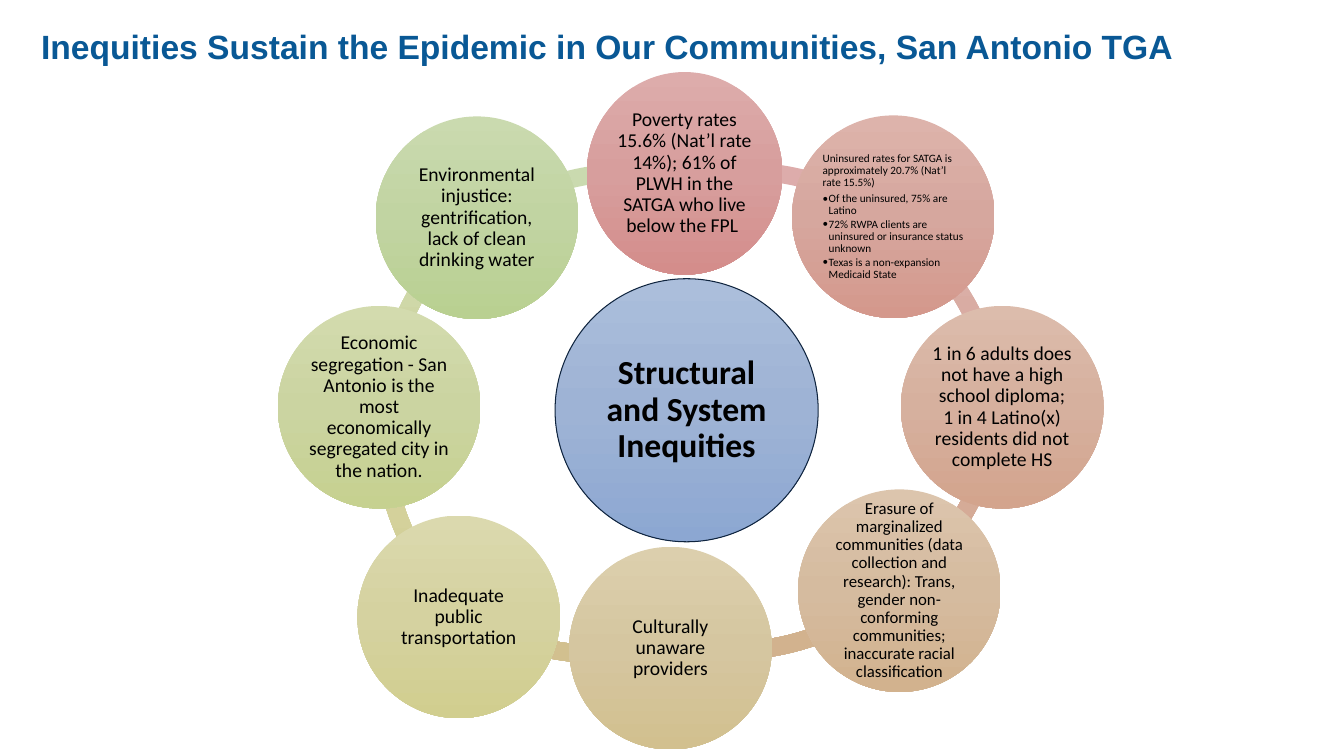
import copy

import pptx
import pptx.dml.color
import pptx.enum.shapes
import pptx.enum.text
import pptx.oxml
import pptx.oxml.ns
import pptx.util

Inches, Pt = pptx.util.Inches, pptx.util.Pt
SHAPE = pptx.enum.shapes.MSO_SHAPE
ALIGN = pptx.enum.text.PP_ALIGN
RGB = pptx.dml.color.RGBColor.from_string
qn = pptx.oxml.ns.qn

# Content
TITLE = "Inequities Sustain the Epidemic in Our Communities, San Antonio TGA"
HUB = "Structural and System Inequities"
UNINSURED = [
    "Uninsured rates for SATGA is approximately 20.7% (Nat’l rate 15.5%)",
    "Of the uninsured, 75% are Latino",
    "72% RWPA clients are uninsured or insurance status unknown",
    "Texas is a non-expansion Medicaid State",
]
# Clockwise from the top: paragraphs, text size, circle centre, colour key,
# and the arc leading on to the next circle (left, top, start and end in degrees)
FACTORS = [
    (["Poverty rates 15.6% (Nat’l rate 14%); 61% of PLWH in the SATGA who live below the FPL "],
     14, (6.79, 1.72), "poverty", (4.74, 1.61, 257.34, 305.82)),
    (UNINSURED, 8, (8.86, 2.15), "uninsured", (4.76, 1.63, 305.16, 355.44)),
    (["1 in 6 adults does not have a high school diploma;\v"
      "1 in 4 Latino(x) residents did not complete HS"],
     14, (9.94, 4.04), "education", (4.76, 1.19, 5.28, 53.04)),
    (["Erasure of marginalized communities (data collection and research): Trans, "
      "gender non-conforming communities; inaccurate racial classification"],
     12, (8.92, 5.86), "erasure", (4.61, 1.31, 48.78, 102.99)),
    (["Culturally unaware providers"],
     14, (6.65, 6.43), "providers", (3.33, 1.34, 74.1, 122.93)),
    (["Inadequate public transportation"],
     14, (4.55, 6.12), "transport", (3.71, 1.64, 133.66, 184.79)),
    (["Economic segregation - San Antonio is the most economically segregated city in the nation."],
     14, (3.76, 4.04), "segregation", (3.71, 1.55, 182.84, 231.54)),
    (["Environmental injustice: gentrification, lack of clean drinking water"],
     14, (4.73, 2.16), "environment", (3.63, 1.62, 233.93, 282.18)),
]

# Style: gradients run top, middle, bottom
GRADIENTS = {
    "hub": ("ABBEDB", "9EB3D5", "8CA7D2"),
    "poverty": ("DDACAB", "D79E9D", "D48D8B"),
    "uninsured": ("DDB3AB", "D6A79E", "D4988C"),
    "education": ("DCBCAC", "D6B09E", "D3A48D"),
    "erasure": ("DCC5AD", "D5BB9F", "D2B28E"),
    "providers": ("DCCFAD", "D5C6A0", "D2C08F"),
    "transport": ("DBD9AE", "D5D2A0", "D1CE8F"),
    "segregation": ("D3DBAE", "CBD4A1", "C6D190"),
    "environment": ("CADAAF", "C1D4A2", "B9D091"),
}
COLORS = {"title": "095895", "text": "000000", "hub_line": "0F243E"}
CIRCLE, HUB_SIZE, ARC = 2.01, 2.61, 5.24
HUB_CENTER = (6.81, 4.07)
ARC_THICKNESS = 0.034
# Angles are stored in 60000ths of a degree, adjustments in 100000ths
ANGLE_UNIT = 0.6


def write(tf, paragraphs, size, color, inset, font="Calibri", bold=False, align=ALIGN.CENTER):
    margins = dict.fromkeys(("margin_left", "margin_right", "margin_top", "margin_bottom"),
                            Inches(inset))
    frame = {"word_wrap": True, "vertical_anchor": pptx.enum.text.MSO_ANCHOR.MIDDLE, **margins}
    for name, value in frame.items():
        setattr(tf, name, value)
    for i, text in enumerate(paragraphs):
        p = tf.paragraphs[0] if i == 0 else tf.add_paragraph()
        p.text = text
        p.alignment, p.line_spacing = align, 0.9
        if len(paragraphs) > 1:
            p.space_after = Pt(size * (0.15 if i else 0.35))
        if i:  # everything after the lead paragraph is a bullet
            p.level = 1
            pPr = p._p.get_or_add_pPr()
            pPr.set("marL", str(Inches(0.06)))
            pPr.set("indent", str(-Inches(0.06)))
            for tag in (f'buFont typeface="{font}"', 'buChar char="•"'):
                pPr.append(pptx.oxml.parse_xml(f'<a:{tag} {pptx.oxml.ns.nsdecls("a")}/>'))
        for r in p.runs:
            for name, value in {"size": Pt(size), "name": font, "bold": bold}.items():
                setattr(r.font, name, value)
            r.font.color.rgb = RGB(color)


def add_gradient_shape(slide, kind, left, top, width, height, key):
    sp = slide.shapes.add_shape(kind, *(Inches(v) for v in (left, top, width, height)))
    sp.shadow.inherit = False
    sp.line.fill.background()
    sp.fill.gradient()
    sp.fill.gradient_angle = 270
    gs_list = sp._element.spPr.find(qn("a:gradFill")).find(qn("a:gsLst"))
    gs_list.insert(1, copy.deepcopy(gs_list[0]))
    for stop, position, color in zip(sp.fill.gradient_stops, (0, 0.5, 1), GRADIENTS[key]):
        stop.position = position
        stop.color.rgb = RGB(color)
    return sp


def add_circle(slide, center, width, height, key):
    x, y = center
    return add_gradient_shape(slide, SHAPE.OVAL, x - width / 2, y - height / 2,
                              width, height, key)


def main():
    prs = pptx.Presentation()
    prs.slide_width, prs.slide_height = Inches(13.33), Inches(7.5)
    slide = prs.slides.add_slide(prs.slide_layouts[6])

    # Title
    box = slide.shapes.add_textbox(Inches(0.31), Inches(0.24), Inches(11.5), Inches(0.48))
    write(box.text_frame, [TITLE], 24, COLORS["title"], 0.1, "Arial", True, ALIGN.LEFT)

    # Ring of arcs behind the circles
    for *_, key, (left, top, start, end) in reversed(FACTORS):
        arc = add_gradient_shape(slide, SHAPE.BLOCK_ARC, left, top, ARC, ARC, key)
        for i, value in enumerate((start * ANGLE_UNIT, end * ANGLE_UNIT, ARC_THICKNESS)):
            arc.adjustments[i] = value

    # Hub
    hub = add_circle(slide, HUB_CENTER, HUB_SIZE, HUB_SIZE, "hub")
    hub.line.color.rgb = RGB(COLORS["hub_line"])
    hub.line.width = Pt(0.75)
    write(hub.text_frame, [HUB], 24, COLORS["text"], 0.03, bold=True)

    # Factors around the hub
    for paragraphs, size, center, key, _ in FACTORS:
        width = 1.94 if key == "poverty" else CIRCLE
        sp = add_circle(slide, center, width, CIRCLE, key)
        align = ALIGN.LEFT if len(paragraphs) > 1 else ALIGN.CENTER
        write(sp.text_frame, paragraphs, size, COLORS["text"], 0.01, align=align)

    prs.save("out.pptx")


if __name__ == "__main__":
    main()
